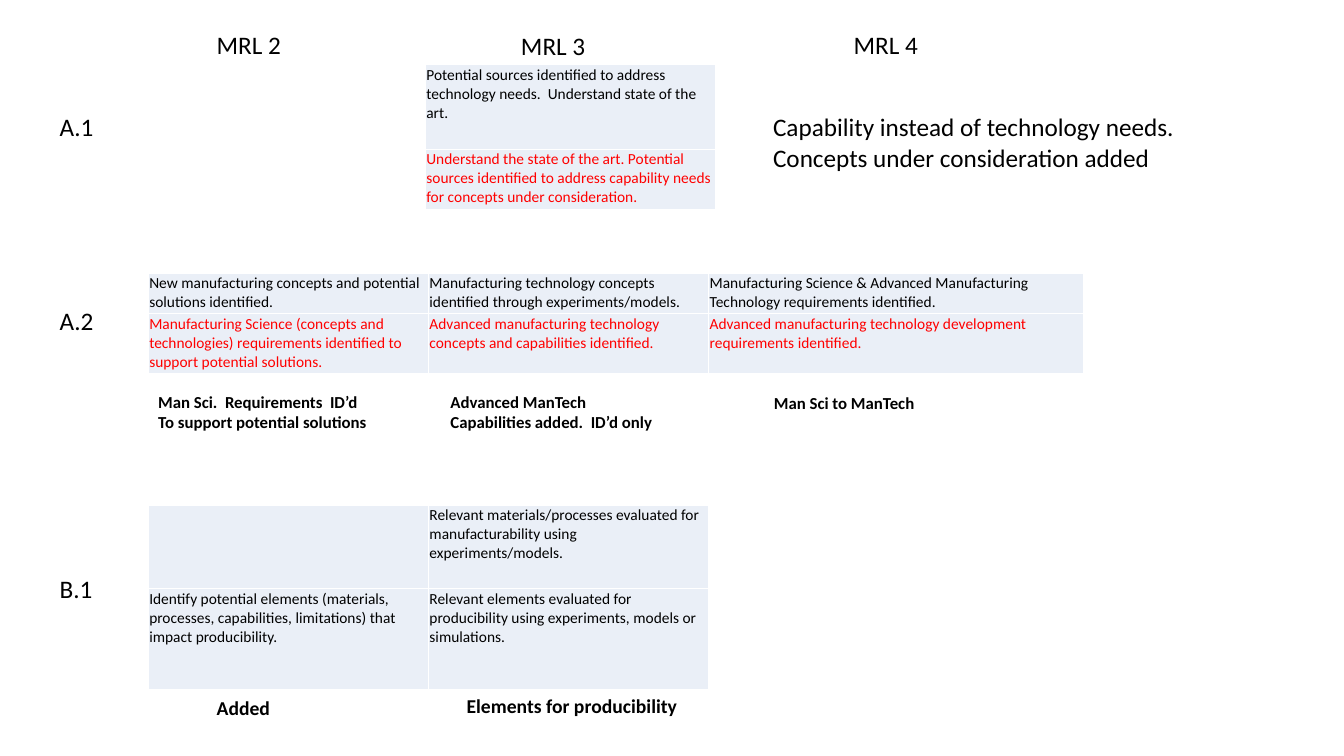
from lxml.etree import SubElement
from pptx import Presentation
from pptx.dml.color import RGBColor
from pptx.enum.text import MSO_AUTO_SIZE
from pptx.oxml.ns import qn
from pptx.util import Inches, Pt

SLIDE_WIDTH, SLIDE_HEIGHT = Inches(13.33), Inches(7.5)
BLACK, RED, WHITE, PALE_BLUE = "000000", "FF0000", "FFFFFF", "EAEFF7"
LEVEL_COLUMN = 20.85


def color(hex_value):
    """Turn a hex string into a colour."""
    return RGBColor.from_string(hex_value)


def across(percent):
    """Convert a percentage of the slide's width to a length."""
    return int(SLIDE_WIDTH * percent / 100)


def down(percent):
    """Convert a percentage of the slide's height to a length."""
    return int(SLIDE_HEIGHT * percent / 100)


def format_paragraph(paragraph, size, hex_value, bold=False):
    """Set the font of a whole paragraph."""
    font = paragraph.font
    font.name, font.size, font.bold = "Calibri", Pt(size), bold
    font.color.rgb = color(hex_value)


def add_label(slide, text, left, top, width, height=5.33, size=18, bold=False):
    """Add an unwrapped label, one paragraph per line of text."""
    box = slide.shapes.add_textbox(across(left), down(top), across(width), down(height))
    frame = box.text_frame
    frame.word_wrap = False
    frame.auto_size = MSO_AUTO_SIZE.SHAPE_TO_FIT_TEXT
    frame.text = text
    for paragraph in frame.paragraphs:
        format_paragraph(paragraph, size, BLACK, bold)


def format_cell(cell, text, hex_value):
    """Fill a cell, give it white borders and write its text."""
    properties = cell._tc.get_or_add_tcPr()
    for side in ("lnL", "lnR", "lnT", "lnB"):
        line = SubElement(properties, qn(f"a:{side}"), w=str(Pt(1)))
        fill = SubElement(line, qn("a:solidFill"))
        SubElement(fill, qn("a:srgbClr"), val=WHITE)
    cell.fill.solid()
    cell.fill.fore_color.rgb = color(PALE_BLUE)
    cell.margin_left = cell.margin_right = cell.margin_top = Inches(0.01)
    cell.margin_bottom = 0
    cell.text = text
    format_paragraph(cell.text_frame.paragraphs[0], 11, hex_value)


def add_criteria_table(slide, left, top, widths, heights, rows, revised_color=RED):
    """Add a table with current criteria above the revised ones."""
    table = slide.shapes.add_table(
        len(heights), len(widths), across(left), down(top),
        across(sum(widths)), down(sum(heights))).table
    table.first_row = table.horz_banding = False
    for column, width in zip(table.columns, widths):
        column.width = across(width)
    for row, height, texts, hex_value in zip(table.rows, heights, rows, (BLACK, revised_color)):
        row.height = down(height)
        for cell, text in zip(row.cells, texts):
            format_cell(cell, text, hex_value)


def add_tables(slide):
    """Add the criteria tables of the three threads."""
    add_criteria_table(slide, 31.65, 8.53, [21.6], [11.2, 8], [
        ["Potential sources identified to address technology needs.  "
         "Understand state of the art."],
        ["Understand the state of the art. Potential sources identified to address "
         "capability needs for concepts under consideration."]])
    add_criteria_table(slide, 11.03, 36.13, [LEVEL_COLUMN, LEVEL_COLUMN, 27.9], [5.33, 8], [
        ["New manufacturing concepts and potential solutions identified.",
         "Manufacturing technology concepts identified through experiments/models.",
         "Manufacturing Science & Advanced Manufacturing Technology requirements identified."],
        ["Manufacturing Science (concepts and technologies) requirements identified "
         "to support potential solutions.",
         "Advanced manufacturing technology concepts and capabilities identified.",
         "Advanced manufacturing technology development requirements identified."]])
    add_criteria_table(slide, 11.03, 66.8, [LEVEL_COLUMN] * 2, [11.07, 13.33], [
        ["", "Relevant materials/processes evaluated for manufacturability "
         "using experiments/models."],
        ["Identify potential elements (materials, processes, capabilities, limitations) "
         "that impact producibility.",
         "Relevant elements evaluated for producibility using experiments, "
         "models or simulations."]], BLACK)


def add_labels(slide):
    """Add the level and thread headings and the remarks."""
    for text, left, top in (("MRL 2", 15.38, 3.2), ("MRL 3", 38.03, 3.33), ("MRL 4", 62.78, 3.2)):
        add_label(slide, text, left, top, 6.38)
    for text, top in (("A.1", 14.13), ("A.2", 39.73), ("B.1", 75.2)):
        add_label(slide, text, 3.7, top, 4.05)
    add_label(slide, "Capability instead of technology needs.\nConcepts under consideration added",
              56.78, 14.13, 32.55, 9.47)
    for text, left, top, width, height, size in (
            ("Man Sci.  Requirements  ID’d\nTo support potential solutions",
             11.03, 51.2, 17.25, 6.67, 12),
            ("Advanced ManTech\nCapabilities added.  ID’d only", 32.78, 51.2, 16.8, 6.67, 12),
            ("Man Sci to ManTech", 56.85, 51.33, 12.08, 4, 12),
            ("Added", 15.38, 91.33, 5.48, 4.53, 14),
            ("Elements for producibility", 33.98, 91.07, 17.33, 4.53, 14)):
        add_label(slide, text, left, top, width, height, size, bold=True)


def main():
    """Build the slide and save it."""
    presentation = Presentation()
    presentation.slide_width, presentation.slide_height = SLIDE_WIDTH, SLIDE_HEIGHT
    slide = presentation.slides.add_slide(presentation.slide_layouts[6])
    add_tables(slide)
    add_labels(slide)
    presentation.save("out.pptx")


if __name__ == "__main__":
    main()
